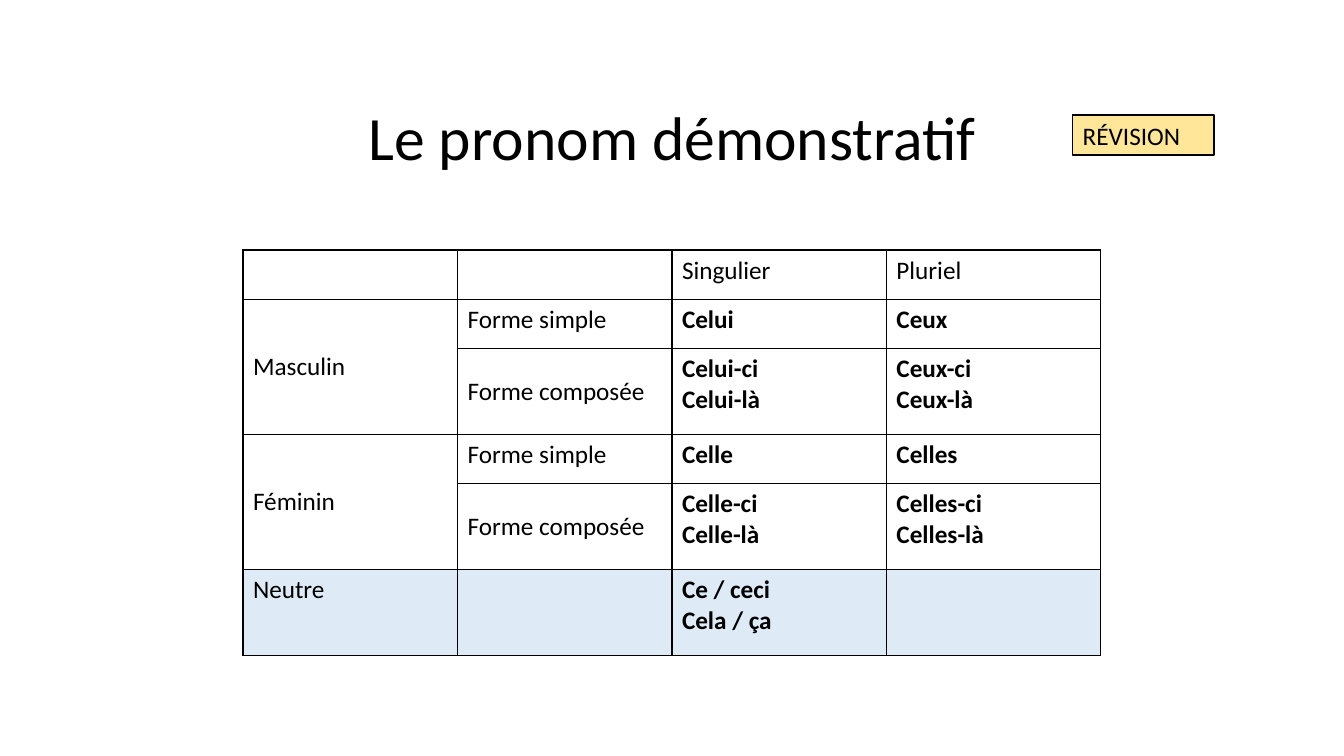
from lxml.etree import SubElement
from pptx import Presentation
from pptx.dml.color import RGBColor
from pptx.enum.shapes import MSO_SHAPE
from pptx.enum.text import MSO_ANCHOR, PP_ALIGN
from pptx.oxml.ns import qn
from pptx.util import Inches, Pt

HUES = {"ink": "000000", "plain": "FFFFFF", "neuter": "DEEBF7", "badge": "FFE699"}
ROWS = [
    ["", "", "Singulier", "Pluriel"],
    ["Masculin", "Forme simple", "Celui", "Ceux"],
    ["", "Forme composée", "Celui-ci\nCelui-là", "Ceux-ci\nCeux-là"],
    ["Féminin", "Forme simple", "Celle", "Celles"],
    ["", "Forme composée", "Celle-ci\nCelle-là", "Celles-ci\nCelles-là"],
    ["Neutre", "", "Ce / ceci\nCela / ça", ""],
]
MIDDLE = {"Masculin", "Féminin", "Forme composée"}


def hue(name):
    return RGBColor.from_string(HUES[name])


def write(frame, text, size=18, bold=False, align=PP_ALIGN.LEFT):
    frame.text = text
    for para in frame.paragraphs:
        para.alignment = align
        font = para.font
        font.name, font.size, font.bold = "Calibri", Pt(size), bold
        font.color.rgb = hue("ink")


def paint(fill, name):
    fill.solid()
    fill.fore_color.rgb = hue(name)


def border(cell):
    props = cell._tc.get_or_add_tcPr()
    for side in ("lnL", "lnR", "lnT", "lnB"):
        line = SubElement(props, qn(f"a:{side}"), w=str(Pt(1)))
        fill = SubElement(line, qn("a:solidFill"))
        SubElement(fill, qn("a:srgbClr"), val=HUES["ink"])


# Heading in the title placeholder
def add_title(slide, left, top, width, height):
    title = slide.shapes.title
    title.left, title.top = Inches(left), Inches(top)
    title.width, title.height = Inches(width), Inches(height)
    title.text_frame.vertical_anchor = MSO_ANCHOR.MIDDLE
    write(title.text_frame, "Le pronom démonstratif", 44, align=PP_ALIGN.CENTER)


# Label in the upper right
def add_badge(slide, left, top, width, height):
    badge = slide.shapes.add_shape(
        MSO_SHAPE.RECTANGLE, Inches(left), Inches(top), Inches(width), Inches(height))
    badge.shadow.inherit = False
    paint(badge.fill, "badge")
    badge.line.color.rgb = hue("ink")
    badge.line.width = Pt(1)
    write(badge.text_frame, "RÉVISION")


# Pronoun table: rows are short or tall by their number of lines
def add_forms(slide, left, top, width, short, tall):
    high = [tall if any("\n" in text for text in row) else short for row in ROWS]
    table = slide.shapes.add_table(
        len(ROWS), len(ROWS[0]), Inches(left), Inches(top),
        Inches(width), Inches(sum(high))).table
    table.first_row = table.horz_banding = False
    for row, size in zip(table.rows, high):
        row.height = Inches(size)
    for r, row in enumerate(ROWS):
        for c, text in enumerate(row):
            cell = table.cell(r, c)
            border(cell)
            paint(cell.fill, "neuter" if r == len(ROWS) - 1 else "plain")
            write(cell.text_frame, text, bold=r > 0 and c > 1)
            if text in MIDDLE:
                cell.vertical_anchor = MSO_ANCHOR.MIDDLE
    for r in (1, 3):
        table.cell(r, 0).merge(table.cell(r + 1, 0))


def main():
    deck = Presentation()
    deck.slide_width, deck.slide_height = Inches(13.33), Inches(7.5)
    slide = deck.slides.add_slide(deck.slide_layouts[5])
    add_forms(slide, 2.41, 2.48, 8.51, 0.49, 0.85)
    add_title(slide, 2.08, 0.93, 9.18, 0.84)
    add_badge(slide, 10.64, 1.14, 1.4, 0.4)
    deck.save("out.pptx")


if __name__ == "__main__":
    main()
